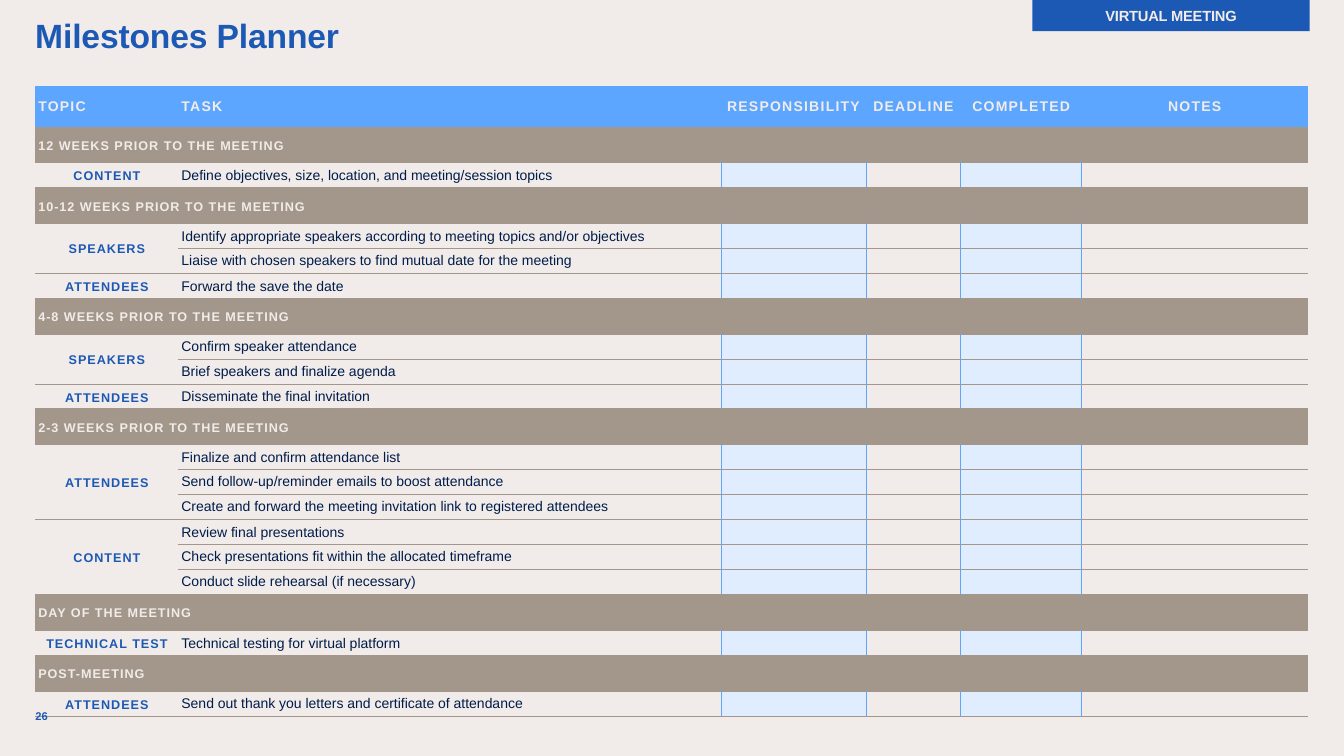
"""Build the milestones planner slide for a virtual meeting."""
from lxml import etree
from pptx import Presentation
from pptx.dml.color import RGBColor
from pptx.enum.shapes import MSO_SHAPE
from pptx.enum.text import MSO_ANCHOR, PP_ALIGN
from pptx.oxml.ns import qn
from pptx.util import Inches, Pt

HEADS = ["TOPIC", "TASK", "RESPONSIBILITY", "DEADLINE", "COMPLETED", "NOTES"]
PLAN = [
    ("12 WEEKS PRIOR TO THE MEETING", [
        ("CONTENT", ["Define objectives, size, location, and meeting/session topics"]),
    ]),
    ("10-12 WEEKS PRIOR TO THE MEETING", [
        ("SPEAKERS", [
            "Identify appropriate speakers according to meeting topics and/or objectives",
            "Liaise with chosen speakers to find mutual date for the meeting",
        ]),
        ("ATTENDEES", ["Forward the save the date"]),
    ]),
    ("4-8 WEEKS PRIOR TO THE MEETING", [
        ("SPEAKERS", ["Confirm speaker attendance", "Brief speakers and finalize agenda"]),
        ("ATTENDEES", ["Disseminate the final invitation"]),
    ]),
    ("2-3 WEEKS PRIOR TO THE MEETING", [
        ("ATTENDEES", [
            "Finalize and confirm attendance list",
            "Send follow-up/reminder emails to boost attendance",
            "Create and forward the meeting invitation link to registered attendees",
        ]),
        ("CONTENT", [
            "Review final presentations",
            "Check presentations fit within the allocated timeframe",
            "Conduct slide rehearsal (if necessary)",
        ]),
    ]),
    ("DAY OF THE MEETING", [
        ("TECHNICAL TEST", ["Technical testing for virtual platform"]),
    ]),
    ("POST-MEETING", [
        ("ATTENDEES", ["Send out thank you letters and certificate of attendance"]),
    ]),
]

CREAM = RGBColor(0xF1, 0xEC, 0xE9)
BLUE = RGBColor(0x1C, 0x59, 0xB5)
SKY = RGBColor(0x5D, 0xA6, 0xFF)
PALE = RGBColor(0xDF, 0xED, 0xFF)
TAUPE = RGBColor(0xA3, 0x97, 0x8B)
NAVY = RGBColor(0x00, 0x1C, 0x4A)

LEFT, MIDDLE = PP_ALIGN.LEFT, MSO_ANCHOR.MIDDLE
CENTER, TOP = PP_ALIGN.CENTER, MSO_ANCHOR.TOP
RECT = MSO_SHAPE.RECTANGLE
PLAIN = "{2D5ABB26-0587-4C30-8999-92F81FD0307C}"

EDGE, TABLE_TOP, TALL = 0.35, 0.85, 6.26
COLS = [1.42, 5.38, 1.44, 0.94, 1.2, 2.24]
SHARE = {"head": 41, "band": 36, "task": 25}
LINE = Pt(12)

FORMATS = {
    "title": dict(size=Pt(24), color=BLUE, bold=True, spc=-10),
    "tag": dict(size=Pt(10.5), color=CREAM, bold=True, spc=-10),
    "page": dict(size=Pt(8), color=BLUE, bold=True, spc=0),
    "head": dict(size=Pt(10), color=CREAM, bold=True, spc=90),
    "band": dict(size=Pt(9), color=CREAM, bold=True, spc=70),
    "topic": dict(size=Pt(9), color=BLUE, bold=True, spc=70),
    "task": dict(size=Pt(10), color=NAVY, bold=False, spc=0),
}


def write(frame, text, kind, align=LEFT, space=None):
    look = FORMATS[kind]
    para = frame.paragraphs[0]
    para.alignment, para.line_spacing = align, space
    run = para.add_run()
    run.text = text
    for key, value in dict(name="Arial", size=look["size"], bold=look["bold"]).items():
        setattr(run.font, key, value)
    run.font.color.rgb = look["color"]
    run._r.get_or_add_rPr().set("spc", str(look["spc"]))


def inset(frame, **extra):
    sides = dict.fromkeys(("margin_left", "margin_top", "margin_right", "margin_bottom"), 0)
    for key, value in {**sides, **extra}.items():
        setattr(frame, key, value)


def rule(cell, **lines):
    props = cell._tc.get_or_add_tcPr()
    for side in "LRTB":
        if side in lines:
            line = etree.SubElement(props, qn("a:ln" + side), w=str(Pt(0.5)))
            fill = etree.SubElement(line, qn("a:solidFill"))
            etree.SubElement(fill, qn("a:srgbClr"), val=str(lines[side]))


def paint(cell, color=None):
    pad = Inches(0.03)
    inset(cell, margin_left=pad, margin_right=pad, vertical_anchor=MIDDLE)
    if color is None:
        cell.fill.background()
    else:
        cell.fill.solid()
        cell.fill.fore_color.rgb = color


def put_task(grid, row, text, space):
    for col in range(1, len(COLS)):
        cell = grid.cell(row, col)
        sides = dict(T=TAUPE, B=TAUPE)
        if col > 1:
            sides["L"] = SKY
        if col < len(COLS) - 1:
            sides["R"] = SKY
        rule(cell, **sides)
        paint(cell, PALE if col in (2, 4) else None)
        if col == 1:
            write(cell.text_frame, text, "task", space=space)
        else:
            para = cell.text_frame.paragraphs[0]._p
            etree.SubElement(para, qn("a:endParaRPr"), sz="1000")


def put_topic(grid, row, topic, count):
    cell = grid.cell(row, 0)
    if count > 1:
        cell.merge(grid.cell(row + count - 1, 0))
    rule(cell, T=TAUPE, B=TAUPE)
    paint(cell)
    write(cell.text_frame, topic, "topic", CENTER, LINE)


def put_table(slide):
    kinds = ["head"]
    for _, topics in PLAN:
        kinds += ["band"] + ["task"] * sum(len(tasks) for _, tasks in topics)
    unit = TALL / sum(SHARE[kind] for kind in kinds)
    frame = slide.shapes.add_table(len(kinds), len(COLS), Inches(EDGE), Inches(TABLE_TOP),
                                   Inches(sum(COLS)), Inches(TALL))
    grid = frame.table
    grid.first_row = grid.horz_banding = False
    grid._tbl.tblPr.find(qn("a:tableStyleId")).text = PLAIN
    for col, wide in zip(grid.columns, COLS):
        col.width = Inches(wide)
    for row, kind in zip(grid.rows, kinds):
        row.height = Inches(SHARE[kind] * unit)
    for col, head in enumerate(HEADS):
        cell = grid.cell(0, col)
        paint(cell, SKY)
        write(cell.text_frame, head, "head", CENTER if col > 1 else LEFT, LINE)
    row = 1
    for band, topics in PLAN:
        cell = grid.cell(row, 0)
        cell.merge(grid.cell(row, len(COLS) - 1))
        paint(cell, TAUPE)
        write(cell.text_frame, band, "band", space=LINE)
        row += 1
        for topic, tasks in topics:
            put_topic(grid, row, topic, len(tasks))
            for step, task in enumerate(tasks):
                put_task(grid, row + step, task, None if step else LINE)
            row += len(tasks)


def put_text(slide, text, kind, *place):
    frame = slide.shapes.add_textbox(*map(Inches, place)).text_frame
    inset(frame, word_wrap=True, vertical_anchor=TOP)
    write(frame, text, kind)


def put_tag(slide):
    tag = slide.shapes.add_shape(RECT, *map(Inches, (10.24, 0, 2.75, 0.31)))
    tag.shadow.inherit = False
    tag.fill.solid()
    tag.fill.fore_color.rgb = BLUE
    tag.line.fill.background()
    inset(tag.text_frame, word_wrap=False, vertical_anchor=MIDDLE)
    write(tag.text_frame, "VIRTUAL MEETING", "tag", CENTER)


def main():
    deck = Presentation()
    deck.slide_width, deck.slide_height = Inches(13.33), Inches(7.5)
    slide = deck.slides.add_slide(deck.slide_layouts[6])
    back = slide.background.fill
    back.solid()
    back.fore_color.rgb = CREAM
    put_table(slide)
    put_text(slide, "Milestones Planner", "title", EDGE, 0.15, 10.67, 1.66)
    put_tag(slide)
    put_text(slide, "26", "page", EDGE, 7.04, 0.22, 0.2)
    deck.save("out.pptx")


if __name__ == "__main__":
    main()
